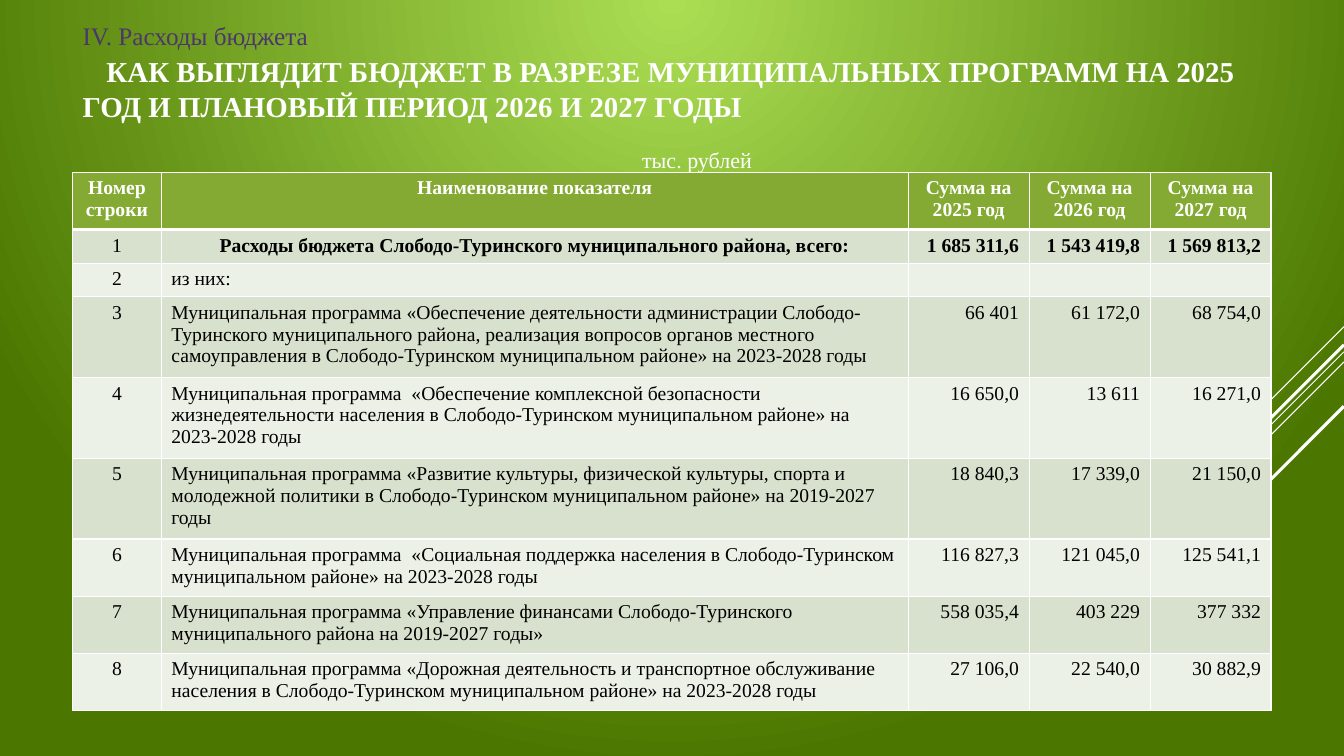
from lxml import etree
from pptx import Presentation
from pptx.dml.color import RGBColor
from pptx.enum import shapes, text
from pptx.oxml import ns
from pptx.util import Pt

INK = {"white": "FFFFFF", "black": "000000", "plum": "4C376B",
       "glow": "ACDE54", "deep": "4B7700", "head": "84AA33",
       "odd": "D8E1CD", "even": "ECF1E8"}
FONT = "Times New Roman"
PART = "IV. Расходы бюджета"
TITLE = ("КАК ВЫГЛЯДИТ БЮДЖЕТ В РАЗРЕЗЕ МУНИЦИПАЛЬНЫХ ПРОГРАММ НА 2025 "
         "ГОД И ПЛАНОВЫЙ ПЕРИОД 2026 И 2027 ГОДЫ")
UNIT = "тыс. рублей"
HEADS = ["Номер строки", "Наименование показателя"] + [
    f"Сумма на {year} год" for year in (2025, 2026, 2027)]
ROWS = [
    (1, "Расходы бюджета Слободо-Туринского муниципального района, всего:",
     "1 685 311,6", "1 543 419,8", "1 569 813,2"),
    (1, "из них:", "", "", ""),
    (3, "Муниципальная программа «Обеспечение деятельности администрации "
     "Слободо-Туринского муниципального района, реализация вопросов органов "
     "местного самоуправления в Слободо-Туринском муниципальном районе» "
     "на 2023-2028 годы", "66 401", "61 172,0", "68 754,0"),
    (3, "Муниципальная программа  «Обеспечение комплексной безопасности "
     "жизнедеятельности населения в Слободо-Туринском муниципальном районе» "
     "на 2023-2028 годы", "16 650,0", "13 611", "16 271,0"),
    (3, "Муниципальная программа «Развитие культуры, физической культуры, "
     "спорта и молодежной политики в Слободо-Туринском муниципальном районе» "
     "на 2019-2027 годы", "18 840,3", "17 339,0", "21 150,0"),
    (2, "Муниципальная программа  «Социальная поддержка населения в "
     "Слободо-Туринском муниципальном районе» на 2023-2028 годы",
     "116 827,3", "121 045,0", "125 541,1"),
    (2, "Муниципальная программа «Управление финансами Слободо-Туринского "
     "муниципального района на 2019-2027 годы»",
     "558 035,4", "403 229", "377 332"),
    (2, "Муниципальная программа «Дорожная деятельность и транспортное "
     "обслуживание населения в Слободо-Туринском муниципальном районе» "
     "на 2023-2028 годы", "27 106,0", "22 540,0", "30 882,9"),
]
RAYS = [(233.3, 72, 0.75), (251.3, 234.7, 0.75), (258.5, 149.4, 0.75),
        (246.3, 137.9, 2.25), (290.2, 100.1, 2.25)]
WIDE, HIGH = 960, 540
LEFT, SPAN = 51.84, 856.1
COLS = [63.4, 533.5, 86.4, 86.4, 86.4]
LINE, PAD = 15.5, 7.2
ALIGN = text.PP_ALIGN


def color(name):
    return RGBColor.from_string(INK[name])


def style(para, size, ink, bold=False, align=ALIGN.LEFT):
    para.alignment = align
    for run in para.runs:
        font = run.font
        font.name, font.size, font.bold = FONT, Pt(size), bold
        font.color.rgb = color(ink)


def paint(slide):
    fill = slide.background.fill
    fill.gradient()
    for stop, name in zip(fill.gradient_stops, ("glow", "deep")):
        stop.color.rgb = color(name)
    grad = slide.element.find(".//" + ns.qn("a:gradFill"))
    old = grad.find(ns.qn("a:lin"))
    if old is not None:
        grad.remove(old)
    ring = etree.SubElement(grad, ns.qn("a:path"), path="circle")
    etree.SubElement(ring, ns.qn("a:fillToRect"),
                     l="50000", t="0", r="50000", b="100000")


def ray(slide, top, run, width):
    line = slide.shapes.add_connector(
        shapes.MSO_CONNECTOR.STRAIGHT, Pt(WIDE), Pt(top),
        Pt(WIDE - run), Pt(top + run))
    line.line.color.rgb = color("white")
    line.line.width = Pt(width)
    etree.SubElement(line.element.spPr, ns.qn("a:effectLst"))


def border(cell, side, width):
    edge = etree.SubElement(cell._tc.get_or_add_tcPr(), ns.qn("a:" + side),
                            w=str(Pt(width)))
    fill = etree.SubElement(edge, ns.qn("a:solidFill"))
    etree.SubElement(fill, ns.qn("a:srgbClr"), val=INK["white"])


def draw_title(slide):
    title = slide.shapes.title
    title.left, title.top = Pt(LEFT), Pt(37.4)
    title.width, title.height = Pt(SPAN), Pt(85.7)
    frame = title.text_frame
    frame.text = TITLE
    frame.word_wrap = True
    frame.auto_size = text.MSO_AUTO_SIZE.NONE
    frame.vertical_anchor = text.MSO_ANCHOR.TOP
    frame.margin_top = Pt(0.6)
    main = frame.paragraphs[0]
    style(main, 20.6, "white", True)
    main.line_spacing = Pt(25)
    main.space_before = Pt(0)
    main._p.get_or_add_pPr().set("indent", str(Pt(17)))
    unit = frame.add_paragraph()
    unit.text = UNIT
    style(unit, 15.7, "white", align=ALIGN.CENTER)
    unit.line_spacing = 1.0
    unit.space_before = Pt(17)
    unit._p.get_or_add_pPr().set("marL", str(Pt(36)))


def draw_part(slide):
    box = slide.shapes.add_textbox(Pt(LEFT), Pt(14), Pt(SPAN), Pt(23))
    frame = box.text_frame
    frame.word_wrap = True
    frame.vertical_anchor = text.MSO_ANCHOR.MIDDLE
    frame.text = PART
    style(frame.paragraphs[0], 18, "plum")


def draw_table(slide):
    data = [(2, HEADS)] + [
        (row[0], [str(num), *row[1:]]) for num, row in enumerate(ROWS, 1)]
    tall = [PAD + LINE * count for count, _ in data]
    table = slide.shapes.add_table(
        len(data), len(COLS), Pt(LEFT), Pt(123.1), Pt(SPAN), Pt(sum(tall))).table
    for col, width in zip(table.columns, COLS):
        col.width = Pt(width)
    for r, (_, words) in enumerate(data):
        table.rows[r].height = Pt(tall[r])
        for c, word in enumerate(words):
            cell = table.cell(r, c)
            cell.text = word
            para = cell.text_frame.paragraphs[0]
            if r == 0 or c == 0 or (r == 1 and c == 1):
                align = ALIGN.CENTER
            else:
                align = ALIGN.LEFT if c == 1 else ALIGN.RIGHT
            style(para, 14, "black" if r else "white",
                  r == 0 or (r == 1 and c > 0), align)
            if not word:
                para._p.get_or_add_endParaRPr().set("sz", "1400")
            for side in ("lnL", "lnR", "lnT", "lnB"):
                thick = (r, side) in ((0, "lnB"), (1, "lnT"))
                border(cell, side, 3 if thick else 0.96)
            cell.fill.solid()
            cell.fill.fore_color.rgb = color(
                "head" if r == 0 else "odd" if r % 2 else "even")


def main():
    deck = Presentation()
    deck.slide_width, deck.slide_height = Pt(WIDE), Pt(HIGH)
    slide = deck.slides.add_slide(deck.slide_layouts[5])
    paint(slide)
    for item in RAYS:
        ray(slide, *item)
    draw_part(slide)
    draw_title(slide)
    draw_table(slide)
    deck.save("out.pptx")


if __name__ == "__main__":
    main()
